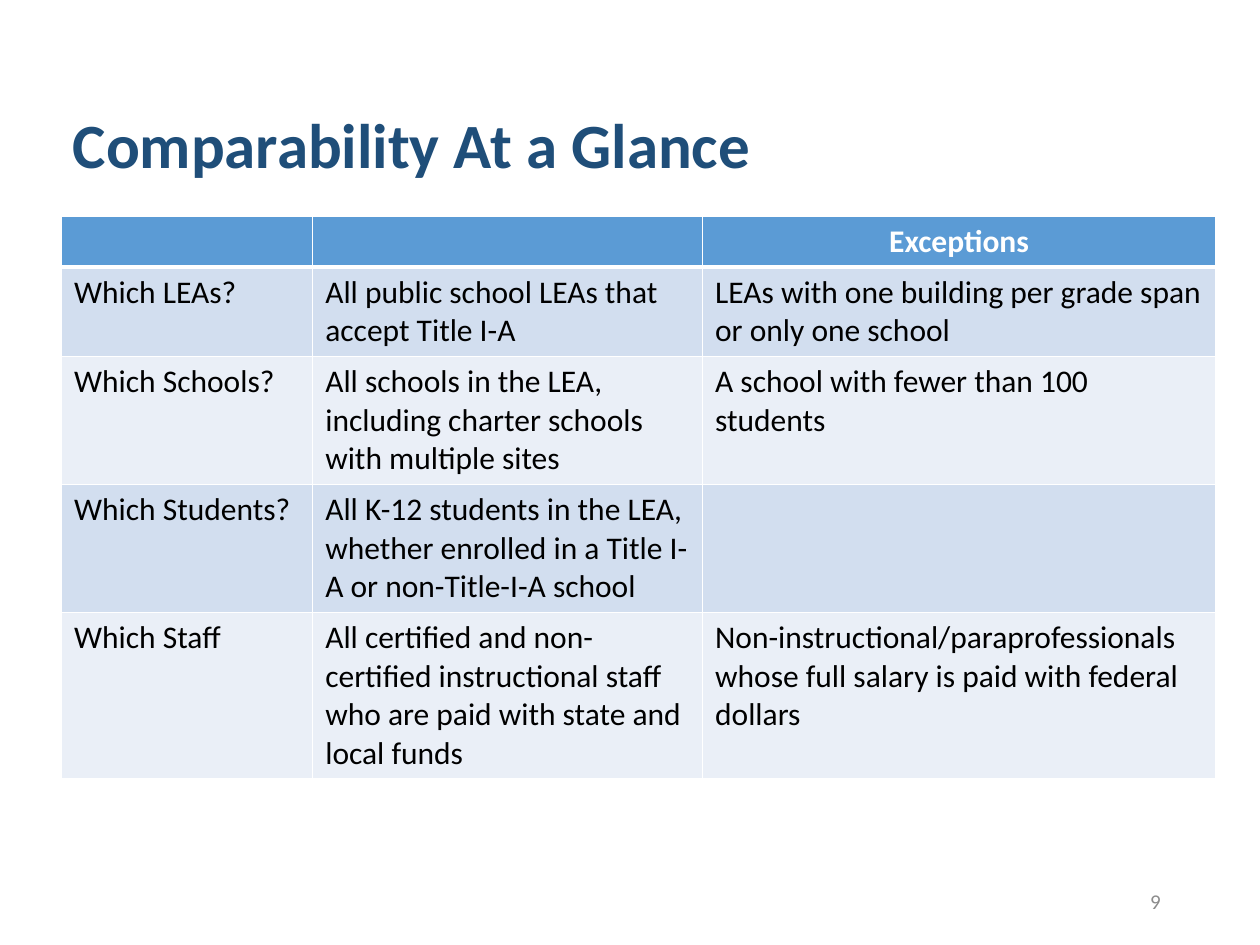
from lxml.etree import SubElement
from pptx import Presentation
from pptx.dml.color import RGBColor
from pptx.enum.text import MSO_ANCHOR, PP_ALIGN
from pptx.oxml.ns import qn
from pptx.util import Pt


def style(paragraph, size, color, bold=False, align=PP_ALIGN.LEFT):
    paragraph.alignment = align
    paragraph.font.name = "Calibri"
    paragraph.font.size = Pt(size)
    paragraph.font.bold = bold
    paragraph.font.color.rgb = RGBColor.from_string(color)


def add_border(cell, side, width):
    line = SubElement(cell._tc.get_or_add_tcPr(), qn(f"a:{side}"), w=str(Pt(width)))
    fill = SubElement(line, qn("a:solidFill"))
    SubElement(fill, qn("a:srgbClr"), val="FFFFFF")


prs = Presentation()
prs.slide_width, prs.slide_height = Pt(720), Pt(540)
slide = prs.slides.add_slide(prs.slide_layouts[6])

# Title and page number
texts = [
    ("Comparability At a Glance", (34.5, 29.5, 620.6, 104.4), 36, "1F4E79", True, PP_ALIGN.LEFT),
    ("9", (508.3, 500.4, 162, 28.8), 12, "8C8C8C", False, PP_ALIGN.RIGHT),
]
for words, box, size, color, bold, align in texts:
    frame = slide.shapes.add_textbox(*map(Pt, box)).text_frame
    frame.word_wrap = True
    frame.vertical_anchor = MSO_ANCHOR.MIDDLE
    frame.text = words
    style(frame.paragraphs[0], size, color, bold, align)

# Comparability table: text and number of lines in each row
rows = [
    (1, ("", "", "Exceptions")),
    (2, ("Which LEAs?",
         "All public school LEAs that accept Title I-A",
         "LEAs with one building per grade span or only one school")),
    (3, ("Which Schools?",
         "All schools in the LEA, including charter schools with multiple sites",
         "A school with fewer than 100 students")),
    (3, ("Which Students?",
         "All K-12 students in the LEA, whether enrolled in a Title I-A or non-Title-I-A school",
         "")),
    (4, ("Which Staff",
         "All certified and non-certified instructional staff who are paid with state and local funds",
         "Non-instructional/paraprofessionals whose full salary is paid with federal dollars")),
]
column_widths = [143.5, 222.8, 293.2]
row_heights = [22 * lines + 7.2 for lines, _ in rows]
comparability = slide.shapes.add_table(
    len(rows), len(column_widths), Pt(35.2), Pt(123.3),
    Pt(sum(column_widths)), Pt(sum(row_heights))).table
for column, width in zip(comparability.columns, column_widths):
    column.width = Pt(width)

for r, (_, entries) in enumerate(rows):
    comparability.rows[r].height = Pt(row_heights[r])
    header = r == 0
    band = "5B9BD5" if header else ("EAEFF7", "D2DEEF")[r % 2]
    for c, entry in enumerate(entries):
        cell = comparability.cell(r, c)
        cell.text = entry
        style(cell.text_frame.paragraphs[0], 18, "FFFFFF" if header else "000000",
              header, PP_ALIGN.CENTER if header else PP_ALIGN.LEFT)
        # Borders precede the fill in the cell properties
        add_border(cell, "lnL", 1)
        add_border(cell, "lnR", 1)
        add_border(cell, "lnT", 3 if r == 1 else 1)
        add_border(cell, "lnB", 3 if header else 1)
        cell.fill.solid()
        cell.fill.fore_color.rgb = RGBColor.from_string(band)

prs.save("out.pptx")
